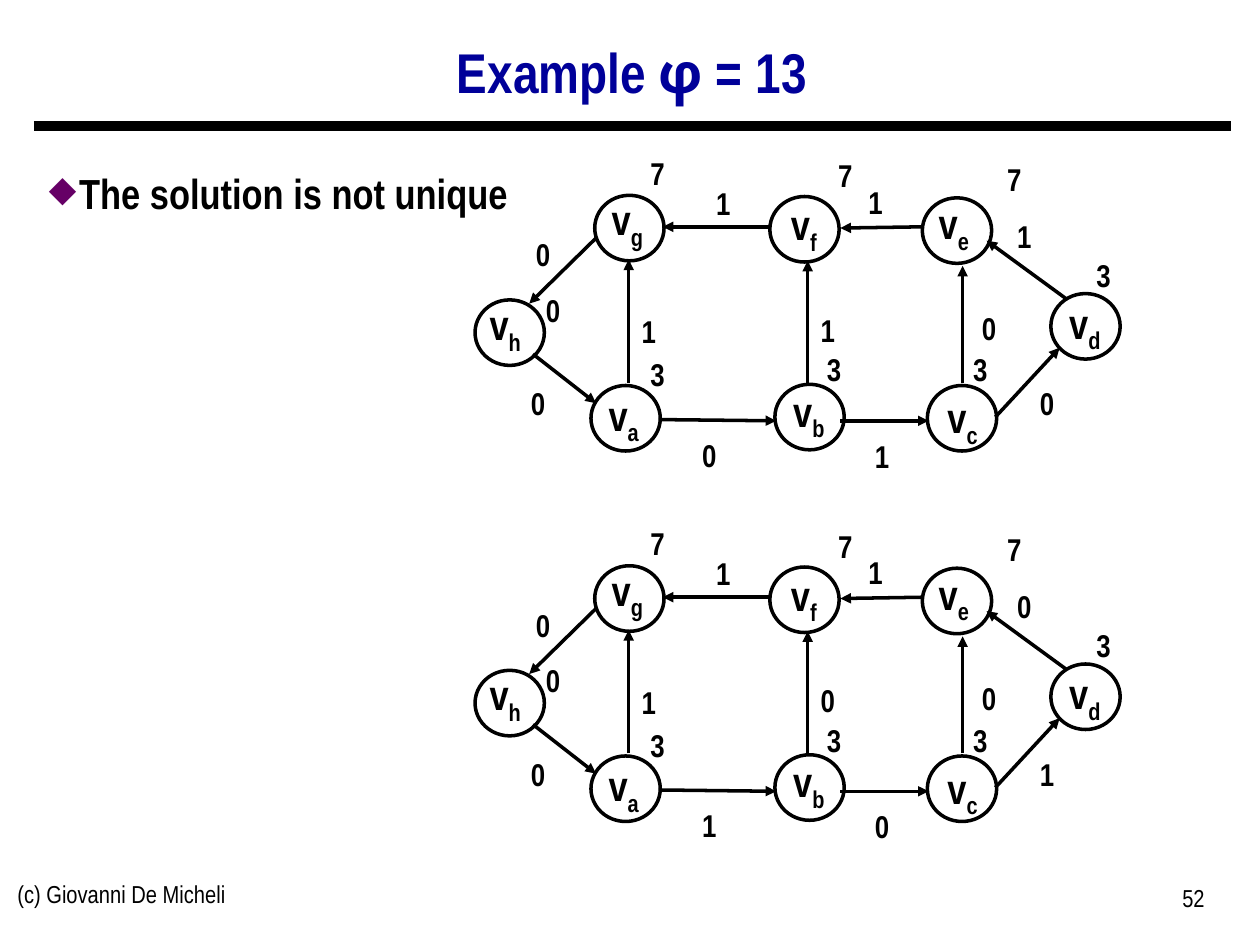
from lxml import etree
from pptx import Presentation
from pptx import util as u
from pptx.dml.color import RGBColor
from pptx.enum import shapes, text
from pptx.oxml import ns

COLORS = {"ink": "000000", "title": "000099", "bullet": "660066"}
FONT = "Arial Narrow"
NODE_SIZE = (0.55, 0.52)
LABEL_SIZE = (0.6, 0.4)
NAME_SIZE = (1.4, 0.5)
GRAPH_STEP = 2.94

# name: circle position, name position, time, time position
NODES = {
    "a": ((4.69, 3.06), (4.25, 3.04), "3", (4.92, 2.77)),
    "b": ((6.15, 3.05), (5.72, 3.01), "3", (6.32, 2.73)),
    "c": ((7.36, 3.06), (6.94, 3.06), "3", (7.48, 2.73)),
    "d": ((8.34, 2.33), (7.91, 2.31), "3", (8.46, 1.98)),
    "e": ((7.32, 1.57), (6.87, 1.52), "7", (7.75, 1.22)),
    "f": ((6.11, 1.56), (5.68, 1.53), "7", (6.41, 1.19)),
    "g": ((4.72, 1.55), (4.28, 1.49), "7", (4.92, 1.17)),
    "h": ((3.77, 2.38), (3.31, 2.32), "0", (4.09, 2.26)),
}
EDGES = {
    "ab": ((5.23, 3.33), (6.16, 3.34), (5.33, 3.41)),
    "bc": ((6.67, 3.34), (7.37, 3.34), (6.7, 3.42)),
    "cd": ((7.9, 3.31), (8.41, 2.76), (8.01, 3)),
    "de": ((8.46, 2.37), (7.83, 1.91), (7.83, 1.67)),
    "ef": ((7.33, 1.8), (6.67, 1.81), (6.65, 1.4)),
    "fg": ((6.1, 1.8), (5.26, 1.8), (5.44, 1.41)),
    "gh": ((4.73, 1.89), (4.2, 2.41), (4.01, 1.82)),
    "ha": ((4.23, 2.81), (4.73, 3.2), (3.97, 3)),
    "ag": ((4.99, 3.04), (4.99, 2.06), (4.85, 2.43)),
    "bf": ((6.41, 3.04), (6.41, 2.07), (6.27, 2.42)),
    "ce": ((7.64, 3.04), (7.64, 2.11), (7.55, 2.4)),
}
WEIGHTS = (
    dict(ab=0, bc=1, cd=0, de=1, ef=1, fg=1, gh=0, ha=0, ag=1, bf=1, ce=0),
    dict(ab=1, bc=0, cd=1, de=0, ef=1, fg=1, gh=0, ha=0, ag=1, bf=0, ce=0),
)


def cm(inches):
    """Return a length in inches as Cm."""
    return u.Cm(inches * 2.54)


def write(p, content, size=18, color="ink", font=FONT, bold=True, baseline=0):
    """Add one formatted run to a paragraph."""
    r = p.add_run()
    r.text = content
    r.font.size = u.Pt(size)
    r.font.bold = bold
    r.font.name = font
    r.font.color.rgb = RGBColor.from_string(COLORS[color])
    if baseline:
        r._r.get_or_add_rPr().set("baseline", str(baseline * 1000))


class Deck:
    """Hold the style and the current slide."""

    def __init__(self):
        """Start a presentation with one title-only slide."""
        self.prs = Presentation()
        self.prs.slide_width, self.prs.slide_height = cm(10), cm(7.5)
        self.s = self.prs.slides.add_slide(self.prs.slide_layouts[5])
        self.target = self.s.shapes

    def title(self, box, parts):
        """Place the title and write its (text, font) parts."""
        sp = self.s.shapes.title
        sp.left, sp.top, sp.width, sp.height = map(cm, box)
        sp.text_frame.vertical_anchor = text.MSO_ANCHOR.MIDDLE
        p = sp.text_frame.paragraphs[0]
        p.alignment, p.line_spacing = text.PP_ALIGN.CENTER, 0.9
        for content, font in parts:
            write(p, content, size=32, color="title", font=font)

    def textbox(self, pos, size, align=text.PP_ALIGN.CENTER, grow=False):
        """Add a wrapping text box and return its paragraph."""
        tf = self.target.add_textbox(*map(cm, (*pos, *size))).text_frame
        tf.word_wrap = True
        if grow:
            tf.auto_size = text.MSO_AUTO_SIZE.SHAPE_TO_FIT_TEXT
        p = tf.paragraphs[0]
        p.alignment = align
        return p

    def bullet(self, pos, size, content):
        """Add a text box with one diamond bullet."""
        p = self.textbox(pos, size, text.PP_ALIGN.LEFT)
        p.line_spacing = 1.25
        pPr = p._p.get_or_add_pPr()
        pPr.set("marL", str(cm(0.28)))
        pPr.set("indent", str(-cm(0.24)))
        clr = etree.SubElement(pPr, ns.qn("a:buClr"))
        etree.SubElement(clr, ns.qn("a:srgbClr"), val=COLORS["bullet"])
        etree.SubElement(pPr, ns.qn("a:buSzPct"), val="85000")
        etree.SubElement(pPr, ns.qn("a:buChar"), char="◆")
        write(p, content, size=24)

    def line(self, start, end, width=2, arrow=False):
        """Add a straight line, with an arrowhead at its end if asked."""
        ends = map(cm, (*start, *end))
        sp = self.target.add_connector(shapes.MSO_CONNECTOR.STRAIGHT, *ends)
        sp.line.width = u.Pt(width)
        sp.line.color.rgb = RGBColor.from_string(COLORS["ink"])
        if arrow:
            ln = sp.line._get_or_add_ln()
            etree.SubElement(ln, ns.qn("a:tailEnd"), type="triangle")
        etree.SubElement(sp._element.spPr, ns.qn("a:effectLst"))

    def circle(self, pos):
        """Add an unfilled node outline."""
        sp = self.target.add_shape(shapes.MSO_SHAPE.FLOWCHART_CONNECTOR,
                                   *map(cm, (*pos, *NODE_SIZE)))
        sp.shadow.inherit = False
        sp.fill.background()
        sp.line.width = u.Pt(2)
        sp.line.color.rgb = RGBColor.from_string(COLORS["ink"])

    def graph(self, weights, dy):
        """Add one grouped graph, moved down by dy inches."""
        def down(pos):
            """Shift a position by dy."""
            return pos[0], pos[1] + dy

        self.target = self.s.shapes.add_group_shape().shapes
        for edge, (start, end, at) in EDGES.items():
            self.line(down(start), down(end), arrow=True)
            write(self.textbox(down(at), LABEL_SIZE, grow=True), str(weights[edge]))
        for name, (circle_at, name_at, time, time_at) in NODES.items():
            self.circle(down(circle_at))
            write(self.textbox(down(time_at), LABEL_SIZE, grow=True), time)
            p = self.textbox(down(name_at), NAME_SIZE, grow=True)
            write(p, "v", size=24)
            write(p, name, size=24, baseline=-25)
        self.target = self.s.shapes


def main():
    """Build and save the slide."""
    deck = Deck()
    deck.title((0.26, 0.22, 9.51, 0.75),
               [("Example ", FONT), ("φ", "Noto Sans"), (" = 13", FONT)])
    deck.line((0.27, 1), (9.77, 1), width=6)
    write(deck.textbox((0.04, 6.93), (3.17, 0.52), text.PP_ALIGN.LEFT),
          "(c) Giovanni De Micheli", size=14, bold=False)
    write(deck.textbox((7.33, 6.96), (2.33, 0.52), text.PP_ALIGN.RIGHT),
          "52", size=14, bold=False)
    deck.bullet((0.25, 1.18), (4.67, 5.69), "The solution is not unique")
    for i, weights in enumerate(WEIGHTS):
        deck.graph(weights, i * GRAPH_STEP)
    deck.prs.save("out.pptx")


if __name__ == "__main__":
    main()
